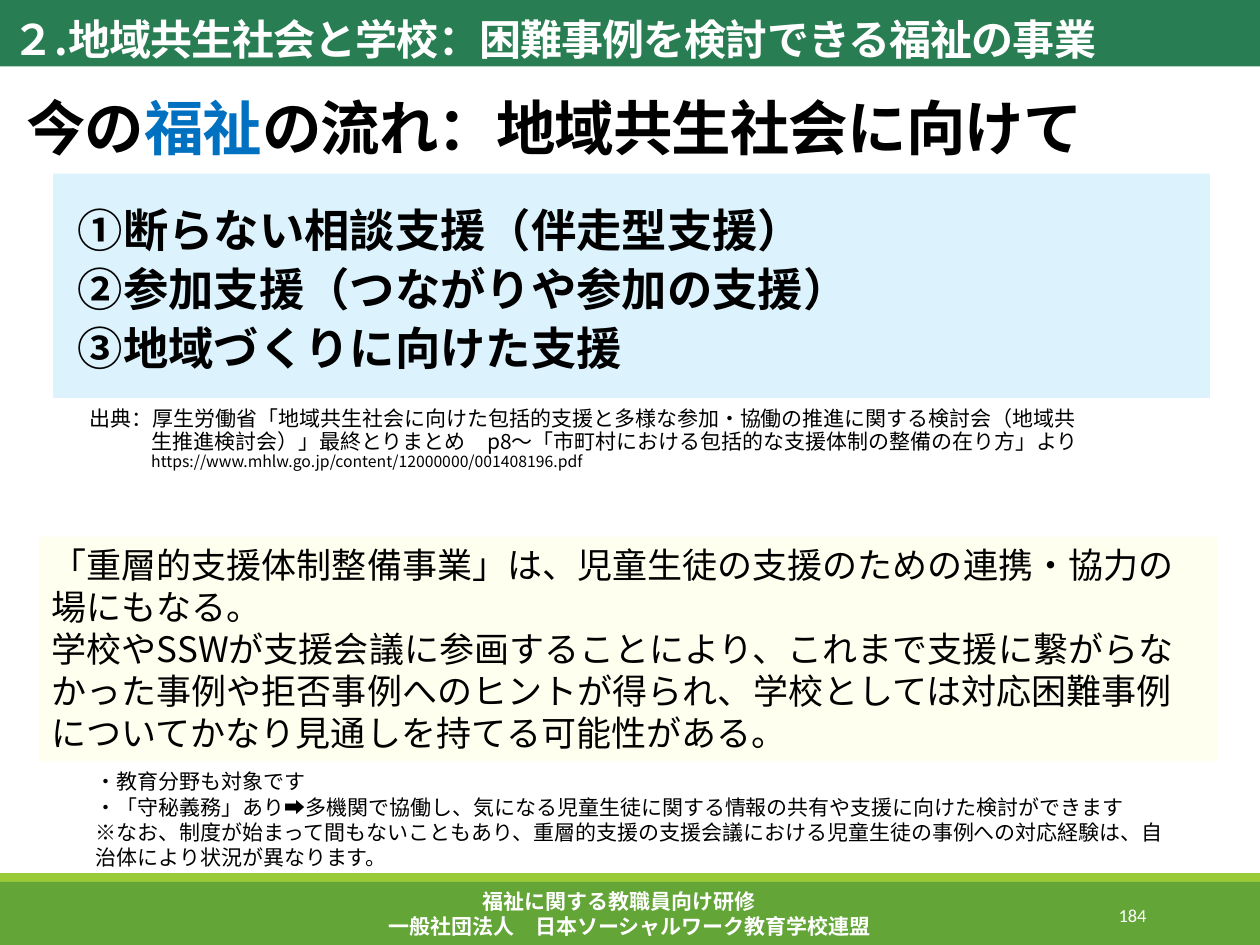
from dataclasses import dataclass
from typing import Optional
from lxml.etree import SubElement as Sub
from pptx import Presentation
from pptx.dml.color import RGBColor as Rgb
from pptx.enum.shapes import MSO_SHAPE as Kind
from pptx.enum.text import MSO_ANCHOR as Anchor, MSO_AUTO_SIZE as Auto, PP_ALIGN as Align
from pptx.oxml.ns import qn
from pptx.util import Cm, Pt


@dataclass(frozen=True)
class Theme:
    font: str = "Noto Sans CJK JP"
    latin: str = "Calibri"
    black: str = "000000"
    white: str = "FFFFFF"
    blue: str = "0070C0"
    green: str = "63A537"
    lime: str = "99CB38"
    forest: str = "297D53"
    sky: str = "DCF3FE"
    cream: str = "FFFFEF"
    title: float = 34
    list: float = 25.9
    lead: float = 24
    text: float = 20
    note: float = 12
    page: float = 10.5
    link: float = 9


@dataclass(frozen=True)
class Box:
    left: float
    top: float
    width: float
    height: float
    fill: Optional[str] = None


@dataclass(frozen=True)
class Run:
    text: str
    size: float
    color: str = "000000"
    bold: bool = False
    track: float = 0
    font: str = "Noto Sans CJK JP"


@dataclass(frozen=True)
class Style:
    align: Align = Align.LEFT
    anchor: Anchor = Anchor.TOP
    line: float = 1
    gap: float = 0
    inset: tuple = (0.25, 0.13, 0.25, 0.13)
    hang: Optional[tuple] = None


def place(shape, box: Box) -> None:
    shape.left, shape.top = Cm(box.left), Cm(box.top)
    shape.width, shape.height = Cm(box.width), Cm(box.height)
    if box.fill:
        shape.fill.solid()
        shape.fill.fore_color.rgb = Rgb.from_string(box.fill)


def add_box(slide, box: Box):
    area = [Cm(n) for n in (box.left, box.top, box.width, box.height)]
    if not box.fill:
        return slide.shapes.add_textbox(*area)
    shape = slide.shapes.add_shape(Kind.RECTANGLE, *area)
    shape.shadow.inherit = False
    shape.line.fill.background()
    place(shape, box)
    return shape


def add_run(para, item: Run) -> None:
    run = para.add_run()
    run.text = item.text
    font = run.font
    font.size, font.bold, font.name = Pt(item.size), item.bold, item.font
    font.color.rgb = Rgb.from_string(item.color)
    props = run._r.get_or_add_rPr()
    Sub(props, qn("a:ea")).set("typeface", item.font)
    if item.track:
        props.set("spc", str(int(item.track * 100)))


def write(shape, paras: list[list[Run]], style: Style) -> None:
    frame = shape.text_frame
    frame.word_wrap, frame.auto_size = True, Auto.NONE
    frame.vertical_anchor = style.anchor
    (frame.margin_left, frame.margin_top,
     frame.margin_right, frame.margin_bottom) = [Cm(n) for n in style.inset]
    for i, runs in enumerate(paras):
        para = frame.add_paragraph() if i else frame.paragraphs[0]
        para.alignment, para.line_spacing = style.align, style.line
        para.space_before = Pt(style.gap if i else 0)
        para.space_after = Pt(0)
        props = para._p.get_or_add_pPr()
        left, first = style.hang or (0, 0)
        props.set("marL", str(Cm(left)))
        props.set("indent", str(Cm(first)))
        Sub(props, qn("a:buNone"))
        for item in runs:
            add_run(para, item)


def main() -> None:
    look = Theme()
    deck = Presentation()
    deck.slide_width, deck.slide_height = Cm(25.4), Cm(19.05)
    slide = deck.slides.add_slide(deck.slide_layouts[1])
    title, body = slide.shapes.title, slide.placeholders[1]

    place(title, Box(0.28, 2.06, 24.77, 2.34))
    write(title, [[Run(text, look.title, color, True, -0.5) for text, color in (
        ("今の", look.black),
        ("福祉", look.blue),
        ("の流れ：地域共生社会に向けて", look.black),
    )]], Style(line=0.85, inset=(0.25, 0, 0.25, 0)))

    place(body, Box(1.07, 3.5, 23.32, 4.52, look.sky))
    write(body, [[Run(text, look.list, bold=True)] for text in (
        "①断らない相談支援（伴走型支援）",
        "②参加支援（つながりや参加の支援）",
        "③地域づくりに向けた支援",
    )], Style(line=0.8, gap=9, inset=(0.5, 0.78, 0.25, 0)))

    add_box(slide, Box(0, 17.6, 25.4, 0.18, look.lime))
    foot = add_box(slide, Box(0, 17.78, 25.4, 1.27, look.green))
    write(foot, [[Run(text, look.note, look.white, True)] for text in (
        "福祉に関する教職員向け研修　",
        "一般社団法人　日本ソーシャルワーク教育学校連盟",
    )], Style(align=Align.CENTER))

    page = add_box(slide, Box(20.62, 17.93, 2.74, 1.02))
    write(page, [[Run("184", look.page, look.white, font=look.latin)]],
          Style(align=Align.RIGHT, anchor=Anchor.MIDDLE))

    head = add_box(slide, Box(0, -0.18, 25.4, 1.52, look.forest))
    write(head, [[Run("２.地域共生社会と学校：困難事例を検討できる福祉の事業",
                      look.lead, look.white, True, -0.5)]],
          Style(anchor=Anchor.BOTTOM, inset=(0.25, 0, 0.25, 0.05)))

    source = add_box(slide, Box(1.3, 8.1, 20.8, 2.34))
    write(source, [[
        Run("出典：厚生労働省「地域共生社会に向けた包括的支援と多様な参加・協働の推進に関する検討会"
            "（地域共生推進検討会）」最終とりまとめ　p8～「市町村における包括的な支援体制の整備の在り方」より",
            look.note),
        Run("https://www.mhlw.go.jp/content/12000000/001408196.pdf", look.link),
    ]], Style(line=0.9, hang=(1.5, -1.24)))

    point = add_box(slide, Box(0.79, 10.82, 23.75, 4.52, look.cream))
    write(point, [[Run(text, look.text)] for text in (
        "「重層的支援体制整備事業」は、児童生徒の支援のための連携・協力の場にもなる。",
        "学校やSSWが支援会議に参画することにより、これまで支援に繋がらなかった事例や拒否事例への"
        "ヒントが得られ、学校としては対応困難事例についてかなり見通しを持てる可能性がある。",
    )], Style())

    note = add_box(slide, Box(1.68, 15.37, 22.12, 2.31))
    write(note, [[Run(text, look.note)] for text in (
        "・教育分野も対象です",
        "・「守秘義務」あり➡多機関で協働し、気になる児童生徒に関する情報の共有や支援に向けた検討ができます",
        "※なお、制度が始まって間もないこともあり、重層的支援の支援会議における児童生徒の事例への"
        "対応経験は、自治体により状況が異なります。",
    )], Style())

    deck.save("out.pptx")


if __name__ == "__main__":
    main()
